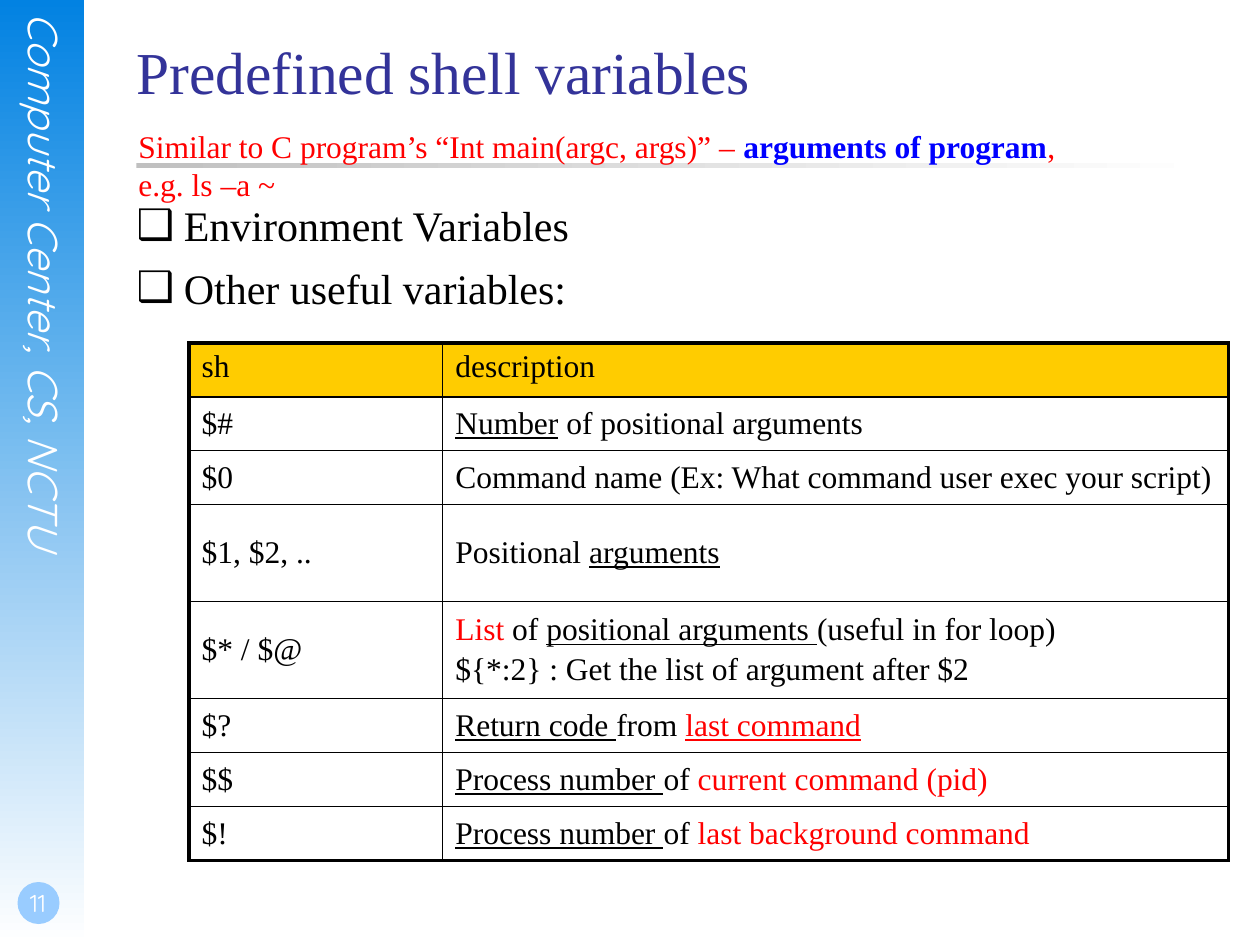
"""Build the slide on predefined shell variables."""
import pptx
import pptx.util
import pptx.dml.color
import pptx.enum.shapes
import pptx.enum.text
import pptx.oxml
import pptx.oxml.ns

Pt = pptx.util.Pt
Shape = pptx.enum.shapes.MSO_SHAPE
Align = pptx.enum.text.PP_ALIGN
Anchor = pptx.enum.text.MSO_ANCHOR
Fit = pptx.enum.text.MSO_AUTO_SIZE

HUES = {"black": "000000", "white": "FFFFFF", "red": "FF0000", "blue": "0000FF",
        "navy": "333399", "gold": "FFCC00", "sky": "0282E2", "pale": "99CCFF",
        "gray": "C0C0C0"}
SERIF, ROUND = "Times New Roman", "Quicksand"
LINE = {"underline": True}
RED = {"hue": "red"}

HEAD = [[[("sh", {})]], [[("description", {})]]]
ROWS = [
    ("$#", [[("Number", LINE), (" of positional arguments", {})]]),
    ("$0", [[("Command name (Ex: What command user exec your script)", {})]]),
    ("$1, $2, ..", [[("Positional ", {}), ("arguments", LINE)]]),
    ("$* / $@", [[("List ", RED), ("of ", {}), ("positional arguments ", LINE),
                  ("(useful in for loop)", {})],
                 [("${*:2} : Get the list of argument after $2", {})]]),
    ("$?", [[("Return code ", LINE), ("from ", {}), ("last command", RED | LINE)]]),
    ("$$", [[("Process number ", LINE), ("of ", {}), ("current command (pid)", RED)]]),
    ("$!", [[("Process number ", LINE), ("of ", {}), ("last background command", RED)]]),
]


def tint(name):
    return pptx.dml.color.RGBColor.from_string(HUES[name])


class Deck:
    """Hold the style and the current slide."""

    def __init__(self):
        self.show = pptx.Presentation()
        self.show.slide_width, self.show.slide_height = Pt(720), Pt(540)
        self.slide = self.show.slides.add_slide(self.show.slide_layouts[1])
        self.base = {"name": SERIF, "size": Pt(18), "hue": "black"}

    def put(self, frame, lines, font, para=None, **form):
        for key, val in form.items():
            setattr(frame, key, val)
        for num, line in enumerate(lines):
            par = frame.add_paragraph() if num else frame.paragraphs[0]
            for key, val in (para or {}).items():
                setattr(par, key, val)
            for text, extra in line:
                run = par.add_run()
                run.text = text
                look = self.base | font | extra
                run.font.color.rgb = tint(look.pop("hue"))
                for key, val in look.items():
                    setattr(run.font, key, val)

    def inset(self, frame, left=0, top=0, right=0, bottom=0):
        frame.margin_left, frame.margin_top = Pt(left), Pt(top)
        frame.margin_right, frame.margin_bottom = Pt(right), Pt(bottom)

    def shape(self, kind, box, *hues, angle=0):
        item = self.slide.shapes.add_shape(kind, *map(Pt, box))
        item.shadow.inherit = False
        item.line.fill.background()
        if len(hues) == 1:
            item.fill.solid()
            item.fill.fore_color.rgb = tint(hues[0])
            return
        item.fill.gradient()
        item.fill.gradient_angle = angle
        for stop, hue, spot in zip(item.fill.gradient_stops, hues, (0, 1)):
            stop.color.rgb, stop.position = tint(hue), spot

    def text(self, box, lines, font, para=None, edge=None, **form):
        frame = self.slide.shapes.add_textbox(*map(Pt, box)).text_frame
        if edge is not None:
            self.inset(frame, *edge)
        self.put(frame, lines, font, para, **form)
        return frame

    def holder(self, index, box, lines, font, para):
        item = self.slide.placeholders[index]
        item.left, item.top, item.width, item.height = map(Pt, box)
        self.inset(item.text_frame)
        self.put(item.text_frame, lines, font, para, auto_size=Fit.NONE,
                 word_wrap=True, vertical_anchor=Anchor.TOP)
        return item.text_frame

    def list(self, box, items):
        para = {"alignment": Align.LEFT, "space_before": Pt(7)}
        frame = self.holder(1, box, [[(item, {})] for item in items],
                            {"size": Pt(24)}, para)
        for par in frame.paragraphs:
            prop = par._p.get_or_add_pPr()
            prop.set("marL", str(Pt(27)))
            prop.set("indent", str(Pt(-27)))
            mark = pptx.oxml.ns.qn("a:buChar")
            prop.append(prop.makeelement(mark, {"char": "❑"}))

    def border(self, cell, sides):
        prop = cell._tc.get_or_add_tcPr()
        space = pptx.oxml.ns.nsdecls("a")
        for side, thick in sides.items():
            prop.append(pptx.oxml.parse_xml(
                f'<a:ln{side} {space} w="{Pt(2.25 if thick else 1)}"><a:solidFill>'
                f'<a:srgbClr val="{HUES["black"]}"/></a:solidFill></a:ln{side}>'))

    def table(self, box, cols, highs, rows):
        grid = self.slide.shapes.add_table(len(rows), len(cols), *map(Pt, box)).table
        for col, wide in zip(grid.columns, cols):
            col.width = Pt(wide)
        for row, high in zip(grid.rows, highs):
            row.height = Pt(high)
        for r, row in enumerate(rows):
            for c, lines in enumerate(row):
                cell = grid.cell(r, c)
                cell.vertical_anchor = Anchor.MIDDLE if r else Anchor.TOP
                self.put(cell.text_frame, lines, {}, {"space_before": Pt(3)})
                self.border(cell, {"L": c == 0, "R": c == len(cols) - 1,
                                   "T": r == 0, "B": r == len(rows) - 1})
                if r:
                    cell.fill.background()
                else:
                    cell.fill.solid()
                    cell.fill.fore_color.rgb = tint("gold")


def main():
    deck = Deck()
    deck.shape(Shape.RECTANGLE, (0, 0, 48, 540), "sky", "white", angle=270)
    label = {"name": ROUND, "hue": "white"}
    side = deck.text((11, 7, 29, 368), [[("Computer Center, CS, NCTU", {})]],
                     label | {"size": Pt(24), "italic": True}, edge=(), word_wrap=True)
    side._txBody.bodyPr.set("vert", "eaVert")
    deck.shape(Shape.OVAL, (10, 504, 24, 24), "pale")
    deck.text((0, 492, 42, 36), [[("11", {})]], label | {"size": Pt(14)},
              {"alignment": Align.CENTER}, (1.5, 0, 0, 3.6),
              word_wrap=True, vertical_anchor=Anchor.BOTTOM)
    deck.shape(Shape.RECTANGLE, (78, 93, 612, 3), "gray", "white")
    deck.holder(0, (78, 20, 612, 90), [[("Predefined shell variables", {})]],
                {"size": Pt(34), "hue": "navy"}, {"alignment": Align.LEFT})
    deck.list((78, 114, 612, 366), ["Environment Variables", "Other useful variables:"])
    highs = [55.5 if r in (4, 5) else 30.8 for r in range(1, len(ROWS) + 2)]
    rows = [HEAD] + [[[[(name, {})]], lines] for name, lines in ROWS]
    deck.table((108, 196, 594, sum(highs)), (145, 449), highs, rows)
    deck.text((72, 69, 548, 51),
              [[("Similar to C program’s “Int main(argc, args)” – ", {}),
                ("arguments of program", {"hue": "blue", "bold": True}), (",", {})],
               [("e.g. ls –a ~", {})]], RED,
              word_wrap=False, auto_size=Fit.SHAPE_TO_FIT_TEXT)
    deck.show.save("out.pptx")


if __name__ == "__main__":
    main()
